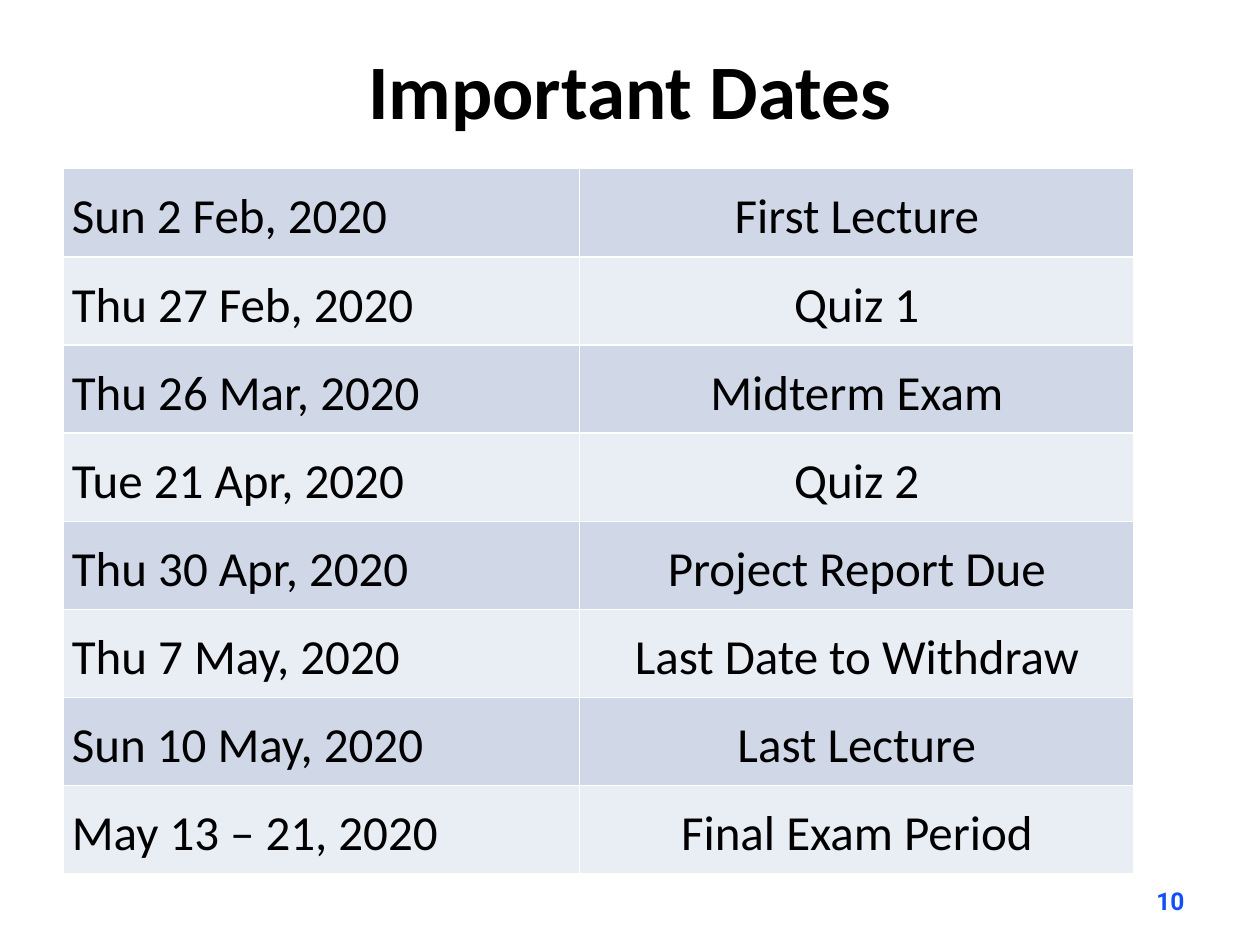
from lxml.etree import SubElement
from pptx import Presentation
from pptx.dml.color import RGBColor
from pptx.enum.text import MSO_ANCHOR, PP_ALIGN
from pptx.oxml.ns import qn
from pptx.util import Cm, Pt

COLOURS = {
    "text": "000000",
    "band_dark": "D0D8E8",
    "band_light": "E9EDF4",
    "border": "FFFFFF",
    "page_number": "114FFB",
}

DATES = [
    ("Sun 2 Feb, 2020", "First Lecture"),
    ("Thu 27 Feb, 2020", "Quiz 1"),
    ("Thu 26 Mar, 2020", "Midterm Exam"),
    ("Tue 21 Apr, 2020", "Quiz 2"),
    ("Thu 30 Apr, 2020", "Project Report Due"),
    ("Thu 7 May, 2020", "Last Date to Withdraw"),
    ("Sun 10 May, 2020", "Last Lecture"),
    ("May 13 – 21, 2020", "Final Exam Period"),
]
DATE_COLUMN_SHARE = 4.1 / 8.5


def colour(name):
    return RGBColor.from_string(COLOURS[name])


def add_span(para, text, size, font="Calibri", bold=False, ink="text"):
    span = para.add_run()
    span.text = text
    span.font.name = font
    span.font.size = Pt(size)
    span.font.bold = bold
    span.font.color.rgb = colour(ink)


def add_line(page, box, text, align, **style):
    """Place one line of text, centred vertically in the box."""
    frame = page.shapes.add_textbox(*box).text_frame
    frame.word_wrap = True
    frame.vertical_anchor = MSO_ANCHOR.MIDDLE
    para = frame.paragraphs[0]
    para.alignment = align
    add_span(para, text, **style)


def add_borders(cell):
    properties = cell._tc.get_or_add_tcPr()
    for side in ("a:lnL", "a:lnR", "a:lnT", "a:lnB"):
        line = SubElement(properties, qn(side), w=str(Pt(1)))
        fill = SubElement(line, qn("a:solidFill"))
        SubElement(fill, qn("a:srgbClr"), val=COLOURS["border"])


def fill_cell(cell, text, align, band):
    add_borders(cell)
    cell.fill.solid()
    cell.fill.fore_color.rgb = colour(band)
    cell.vertical_anchor = MSO_ANCHOR.MIDDLE
    cell.margin_left = cell.margin_right = Cm(0.18)
    cell.margin_top = cell.margin_bottom = 0
    para = cell.text_frame.paragraphs[0]
    para.alignment = align
    para.line_spacing = 1.15
    add_span(para, text, size=28)


def add_dates_table(page, box):
    width, height = box[2:]
    table = page.shapes.add_table(len(DATES), 2, *box).table
    table.first_row = False
    table.horz_banding = False
    table.columns[0].width = int(width * DATE_COLUMN_SHARE)
    table.columns[1].width = width - table.columns[0].width
    for index, (date, event) in enumerate(DATES):
        table.rows[index].height = height // len(DATES)
        band = "band_light" if index % 2 else "band_dark"
        fill_cell(table.cell(index, 0), date, PP_ALIGN.LEFT, band)
        fill_cell(table.cell(index, 1), event, PP_ALIGN.CENTER, band)


def main():
    deck = Presentation()
    deck.slide_width, deck.slide_height = Cm(25.4), Cm(19.05)
    page = deck.slides.add_slide(deck.slide_layouts[6])
    add_line(page, (Cm(1.27), Cm(0.2), Cm(22.86), Cm(3.18)),
             "Important Dates", PP_ALIGN.CENTER, size=44, bold=True)
    add_dates_table(page, (Cm(1.27), Cm(3.4), Cm(21.59), Cm(14.22)))
    add_line(page, (Cm(18.21), Cm(17.65), Cm(5.92), Cm(1.02)),
             "10", PP_ALIGN.RIGHT, size=14, font="Roboto", bold=True,
             ink="page_number")
    deck.save("out.pptx")


if __name__ == "__main__":
    main()
